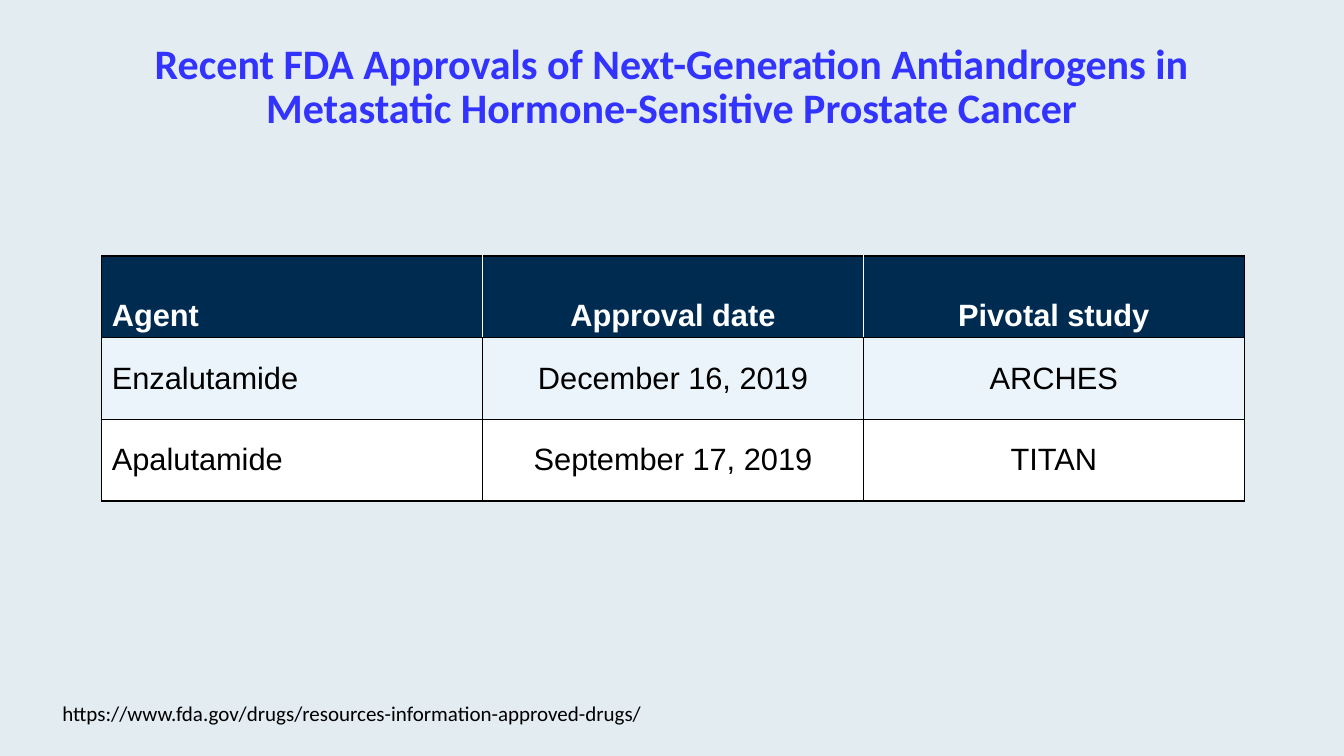
import pptx
import pptx.util
import pptx.dml.color
import pptx.enum.text
import pptx.oxml
import pptx.oxml.ns
import lxml.etree

Inches, Pt = pptx.util.Inches, pptx.util.Pt
RGBColor = pptx.dml.color.RGBColor
ALIGN, ANCHOR = pptx.enum.text.PP_ALIGN, pptx.enum.text.MSO_ANCHOR

# Content
TITLE = ("Recent FDA Approvals of Next-Generation Antiandrogens in "
         "Metastatic Hormone-Sensitive Prostate Cancer")
APPROVALS = [
    ("Agent", "Approval date", "Pivotal study"),
    ("Enzalutamide", "December 16, 2019", "ARCHES"),
    ("Apalutamide", "September 17, 2019", "TITAN"),
]
SOURCE = "https://www.fda.gov/drugs/resources-information-approved-drugs/"

# Colours
BACKGROUND = RGBColor(0xE2, 0xEC, 0xF1)
TITLE_BLUE = RGBColor(0x33, 0x33, 0xFF)
NAVY = RGBColor(0x00, 0x2B, 0x51)
PALE_BLUE = RGBColor(0xEC, 0xF4, 0xFB)
WHITE = RGBColor(0xFF, 0xFF, 0xFF)
BLACK = RGBColor(0x00, 0x00, 0x00)
ROW_FILLS = [NAVY, PALE_BLUE, WHITE]

# Layout in inches
WIDTH, HEIGHT = 13.33, 7.5
CONTENT_WIDTH = 0.85 * WIDTH
COLUMN_WIDTH = CONTENT_WIDTH / len(APPROVALS[0])
ROW_HEIGHT = 0.81


def style(para, name, size, color, bold=False, align=ALIGN.LEFT):
    para.alignment = align
    para.font.name = name
    para.font.size = Pt(size)
    para.font.bold = bold
    para.font.color.rgb = color


def add_text(page, text, left, top, width, height):
    box = page.shapes.add_textbox(*map(Inches, (left, top, width, height)))
    box.text_frame.text = text
    return box.text_frame


def set_borders(cell, colors):
    properties = cell._tc.get_or_add_tcPr()
    for side, color in colors.items():
        line = lxml.etree.SubElement(
            properties, pptx.oxml.ns.qn("a:ln" + side), w=str(Pt(1)))
        fill = lxml.etree.SubElement(line, pptx.oxml.ns.qn("a:solidFill"))
        lxml.etree.SubElement(fill, pptx.oxml.ns.qn("a:srgbClr"), val=str(color))


def add_approvals(page):
    rows, columns = len(APPROVALS), len(APPROVALS[0])
    table = page.shapes.add_table(
        rows, columns, Inches(1.01), Inches(2.54),
        Inches(CONTENT_WIDTH), Inches(rows * ROW_HEIGHT)).table
    for column in table.columns:
        column.width = Inches(COLUMN_WIDTH)
    for r, entries in enumerate(APPROVALS):
        table.rows[r].height = Inches(ROW_HEIGHT)
        header = r == 0
        inner = WHITE if header else BLACK
        for c, entry in enumerate(entries):
            cell = table.cell(r, c)
            set_borders(cell, {
                "L": inner if c > 0 else BLACK,
                "R": inner if c < columns - 1 else BLACK,
                "T": BLACK, "B": BLACK})
            cell.fill.solid()
            cell.fill.fore_color.rgb = ROW_FILLS[r]
            cell.vertical_anchor = ANCHOR.BOTTOM if header else ANCHOR.MIDDLE
            cell.text = entry
            style(cell.text_frame.paragraphs[0], "Arial", 22,
                  WHITE if header else BLACK, header,
                  ALIGN.CENTER if c else ALIGN.LEFT)


def main():
    deck = pptx.Presentation()
    deck.slide_width, deck.slide_height = Inches(WIDTH), Inches(HEIGHT)
    page = deck.slides.add_slide(deck.slide_layouts[6])
    page.background.fill.solid()
    page.background.fill.fore_color.rgb = BACKGROUND

    # Title
    frame = add_text(page, TITLE, (WIDTH - CONTENT_WIDTH) / 2, 0.25,
                     CONTENT_WIDTH, 1.25)
    frame.word_wrap = True
    frame.vertical_anchor = ANCHOR.MIDDLE
    frame.margin_left = frame.margin_right = 0
    frame.margin_top = frame.margin_bottom = 0
    para = frame.paragraphs[0]
    para.line_spacing = 0.88
    style(para, "Calibri", 30, TITLE_BLUE, True, ALIGN.CENTER)

    # Approvals table
    add_approvals(page)

    # Source line
    frame = add_text(page, SOURCE, 0.52, 0.92 * HEIGHT, 6, 0.35)
    frame.word_wrap = False
    frame.auto_size = pptx.enum.text.MSO_AUTO_SIZE.SHAPE_TO_FIT_TEXT
    style(frame.paragraphs[0], "Calibri", 15, BLACK)

    deck.save("out.pptx")


if __name__ == "__main__":
    main()
